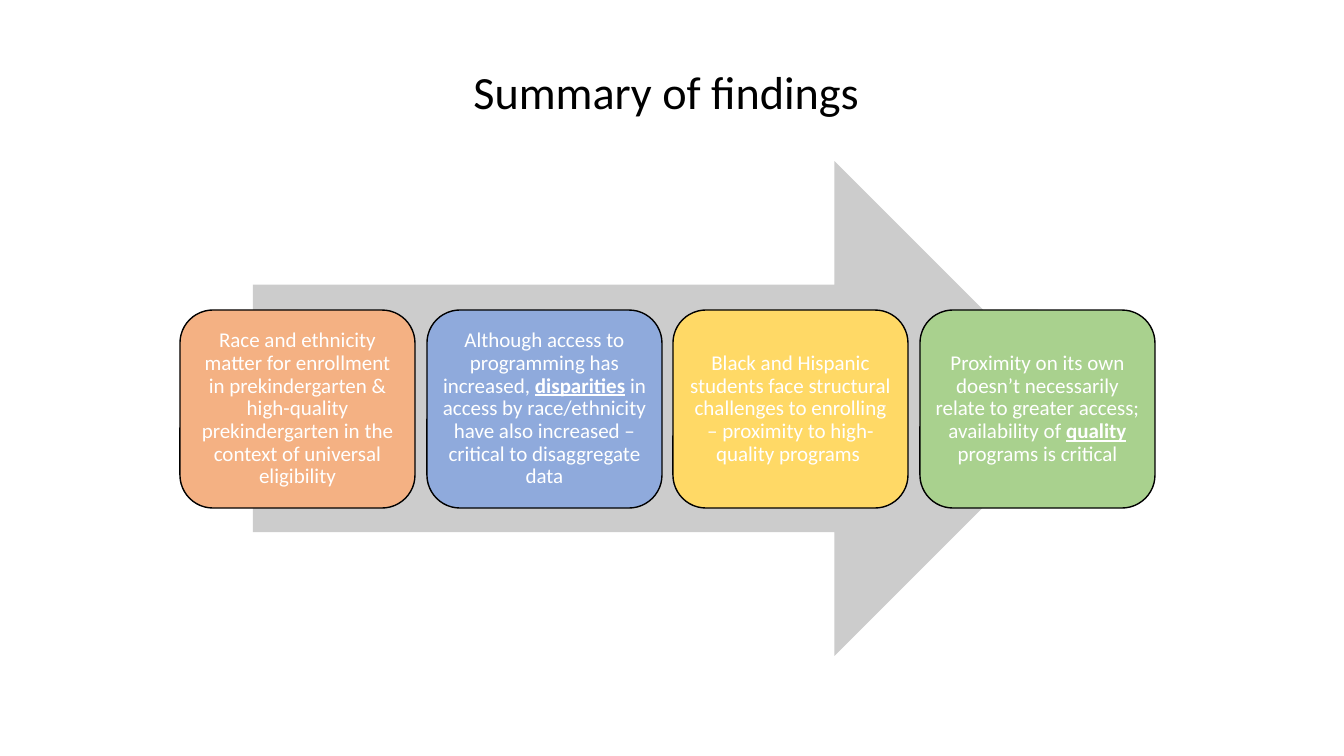
from pptx import Presentation
from pptx.dml.color import RGBColor
from pptx.enum.shapes import MSO_SHAPE
from pptx.enum.text import MSO_ANCHOR, PP_ALIGN
from pptx.util import Emu, Pt


def px(length):
    return Emu(round(length * 914400 / 100.8))


def write(frame, runs, size, color, inset):
    frame.word_wrap = True
    frame.vertical_anchor = MSO_ANCHOR.MIDDLE
    frame.margin_left = frame.margin_right = px(inset)
    frame.margin_top = frame.margin_bottom = px(inset)
    paragraph = frame.paragraphs[0]
    paragraph.alignment = PP_ALIGN.CENTER
    paragraph.line_spacing = 0.9
    for text, emphasis in runs:
        run = paragraph.add_run()
        run.text = text
        run.font.name = "Calibri"
        run.font.size = Pt(size)
        run.font.bold = run.font.underline = emphasis
        run.font.color.rgb = RGBColor.from_string(color)


presentation = Presentation()
presentation.slide_width = px(1344)
presentation.slide_height = px(756)
slide = presentation.slides.add_slide(presentation.slide_layouts[6])

title = slide.shapes.add_textbox(px(237), px(40), px(869), px(110))
write(title.text_frame, [("Summary of findings ", False)], 33, "000000", 6)

arrow = slide.shapes.add_shape(MSO_SHAPE.RIGHT_ARROW, px(253), px(161), px(829), px(495))
arrow.shadow.inherit = False
arrow.fill.solid()
arrow.fill.fore_color.rgb = RGBColor.from_string("CCCCCC")
arrow.line.fill.background()

findings = [
    ("F4B183", [
        ("Race and ethnicity matter for enrollment in prekindergarten & high-quality "
         "prekindergarten in the context of universal eligibility", False),
    ]),
    ("8FAADC", [
        ("Although access to programming has increased, ", False),
        ("disparities", True),
        (" in access by race/ethnicity have also increased – critical to disaggregate data", False),
    ]),
    ("FFD966", [
        ("Black and Hispanic students face structural challenges to enrolling "
         "– proximity to high-quality programs ", False),
    ]),
    ("A9D18E", [
        ("Proximity on its own doesn’t necessarily relate to greater access; availability of ", False),
        ("quality ", True),
        ("programs is critical", False),
    ]),
]

first_left, last_left = 180, 920
pitch = (last_left - first_left) / (len(findings) - 1)
for position, (color, runs) in enumerate(findings):
    left = round(first_left + position * pitch)
    card = slide.shapes.add_shape(MSO_SHAPE.ROUNDED_RECTANGLE, px(left), px(310), px(235), px(198))
    card.shadow.inherit = False
    card.fill.solid()
    card.fill.fore_color.rgb = RGBColor.from_string(color)
    card.line.color.rgb = RGBColor.from_string("000000")
    card.line.width = Pt(1)
    write(card.text_frame, runs, 15, "FFFFFF", 6)

presentation.save("out.pptx")
